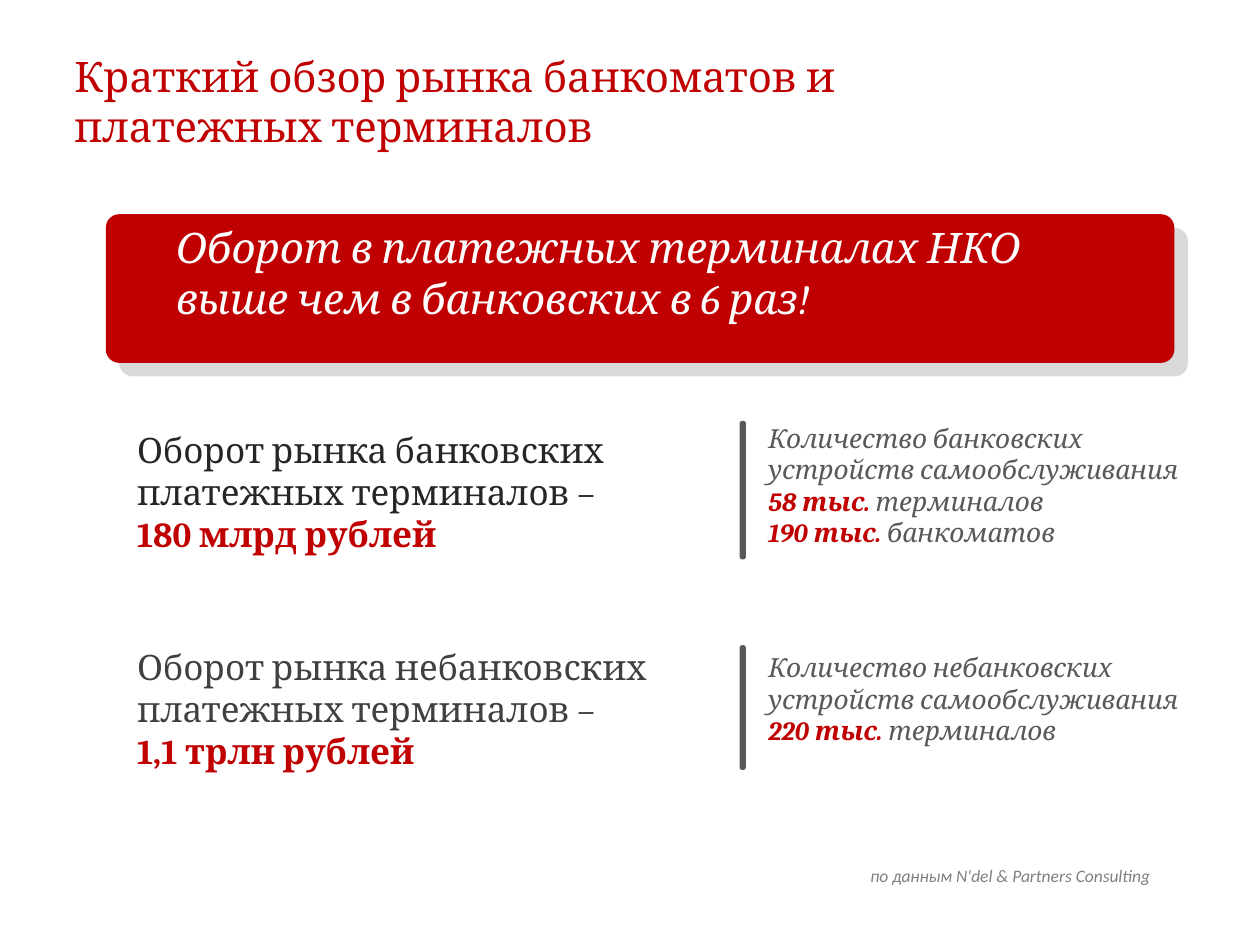
from collections import namedtuple
from dataclasses import dataclass

from lxml import etree
from pptx import Presentation
from pptx import util as u
from pptx.dml.color import RGBColor
from pptx.enum import shapes, text
from pptx.oxml.ns import qn

COLUMNS, ROWS = 100, 75
CELL = u.Inches(0.1)


@dataclass(frozen=True)
class Theme:
    red: str = "C00000"
    white: str = "FFFFFF"
    black: str = "000000"
    near_black: str = "262626"
    dark: str = "404040"
    gray: str = "595959"
    pale: str = "808080"
    serif: str = "Cambria"
    sans: str = "Calibri"
    heading: int = 24
    turnover: int = 20
    devices: int = 15
    source: int = 10


THEME = Theme()
Style = namedtuple("Style", "size color italic font", defaults=(False, THEME.serif))


class Box(namedtuple("Box", "left top width height")):
    """A rectangle measured in grid columns and rows."""

    def inner(self, left, top, width, height):
        return Box(self.left + left, self.top + top, width, height)

    def lengths(self):
        return [round(value * CELL) for value in self]


def fill_frame(frame, paragraphs, style, wrap=True):
    """Write paragraphs of plain strings; a ("words",) tuple is a red bold highlight."""
    frame.word_wrap = wrap
    frame.auto_size = text.MSO_AUTO_SIZE.NONE
    frame.vertical_anchor = text.MSO_ANCHOR.TOP
    for index, pieces in enumerate(paragraphs):
        paragraph = frame.add_paragraph() if index else frame.paragraphs[0]
        paragraph.alignment = text.PP_ALIGN.LEFT
        paragraph.font.size = u.Pt(style.size)
        paragraph.font.name = style.font
        paragraph.font.italic = style.italic
        for piece in pieces:
            highlighted = isinstance(piece, tuple)
            run = paragraph.add_run()
            run.text = piece[0] if highlighted else piece
            run.font.bold = highlighted
            color = THEME.red if highlighted else style.color
            run.font.color.rgb = RGBColor.from_string(color)


def add_text(slide, box, paragraphs, style, wrap=True):
    shape = slide.shapes.add_textbox(*box.lengths())
    fill_frame(shape.text_frame, paragraphs, style, wrap)


def add_rounded(slide, box, color, rounding):
    shape = slide.shapes.add_shape(
        shapes.MSO_SHAPE.ROUNDED_RECTANGLE, *box.lengths())
    shape.adjustments[0] = rounding
    shape.shadow.inherit = False
    shape.fill.solid()
    shape.fill.fore_color.rgb = RGBColor.from_string(color)
    shape.line.fill.background()
    return shape


def add_hard_shadow(shape, distance, degrees, percent):
    effects = shape._element.spPr.find(qn("a:effectLst"))
    shadow = etree.SubElement(
        effects, qn("a:outerShdw"), blurRad="0", dist=str(u.Pt(distance)),
        dir=str(degrees * 60000), algn="tl", rotWithShape="0")
    color = etree.SubElement(shadow, qn("a:srgbClr"), val=THEME.black)
    etree.SubElement(color, qn("a:alpha"), val=str(percent * 1000))


def place_title(slide, box, words):
    title = slide.shapes.title
    title.left, title.top, title.width, title.height = box.lengths()
    fill_frame(title.text_frame, [[words]], Style(THEME.heading, THEME.red))


def place_banner(slide, box, words):
    banner = add_rounded(slide, box, THEME.red, 0.09)
    add_hard_shadow(banner, distance=11, degrees=45, percent=15)
    add_text(slide, box.inner(4.6, 0.1, 72.3, 9.1), [[words]],
             Style(THEME.heading, THEME.white, True))


def place_market(slide, box, turnover, devices, color, turnover_shift, devices_shift):
    """Turnover on the left, device counts on the right, a bar between them."""
    add_text(slide, box.inner(0, turnover_shift, 47, 11.1), turnover,
             Style(THEME.turnover, color))
    add_rounded(slide, box.inner(48.8, 0, 0.5, box.height), THEME.gray, 0.42)
    add_text(slide, box.inner(50.1, devices_shift, 35.6, box.height), devices,
             Style(THEME.devices, THEME.gray, True))


def place_source(slide, box, words):
    add_text(slide, box, [[words]],
             Style(THEME.source, THEME.pale, True, THEME.sans), wrap=False)


def main():
    presentation = Presentation()
    presentation.slide_width = COLUMNS * CELL
    presentation.slide_height = ROWS * CELL
    slide = presentation.slides.add_slide(presentation.slide_layouts[5])

    place_title(slide, Box(4.9, 3.5, 75.2, 9.1),
                "Краткий обзор рынка банкоматов и платежных терминалов")
    place_banner(slide, Box(8.4, 17, 84.8, 11.8),
                 "Оборот в платежных терминалах НКО выше чем в банковских в 6 раз!")
    place_market(
        slide, Box(9.9, 33.4, 85.7, 11),
        [["Оборот рынка банковских платежных терминалов –"],
         [("180 млрд рублей",)]],
        [["Количество банковских"], ["устройств самообслуживания"],
         [("58 тыс. ",), "терминалов"], [("190 тыс. ",), "банкоматов"]],
        THEME.near_black, turnover_shift=0.1, devices_shift=-0.4)
    place_market(
        slide, Box(9.9, 51.2, 85.7, 9.9),
        [["Оборот рынка небанковских"], ["платежных терминалов –"],
         [("1,1 трлн рублей",)]],
        [["Количество небанковских"], ["устройств самообслуживания"],
         [("220 тыс. ",), "терминалов"]],
        THEME.dark, turnover_shift=-0.5, devices_shift=0)
    place_source(slide, Box(68.1, 68.2, 24.3, 2.7),
                 "по данным N'del & Partners Consulting")

    presentation.save("out.pptx")


if __name__ == "__main__":
    main()
